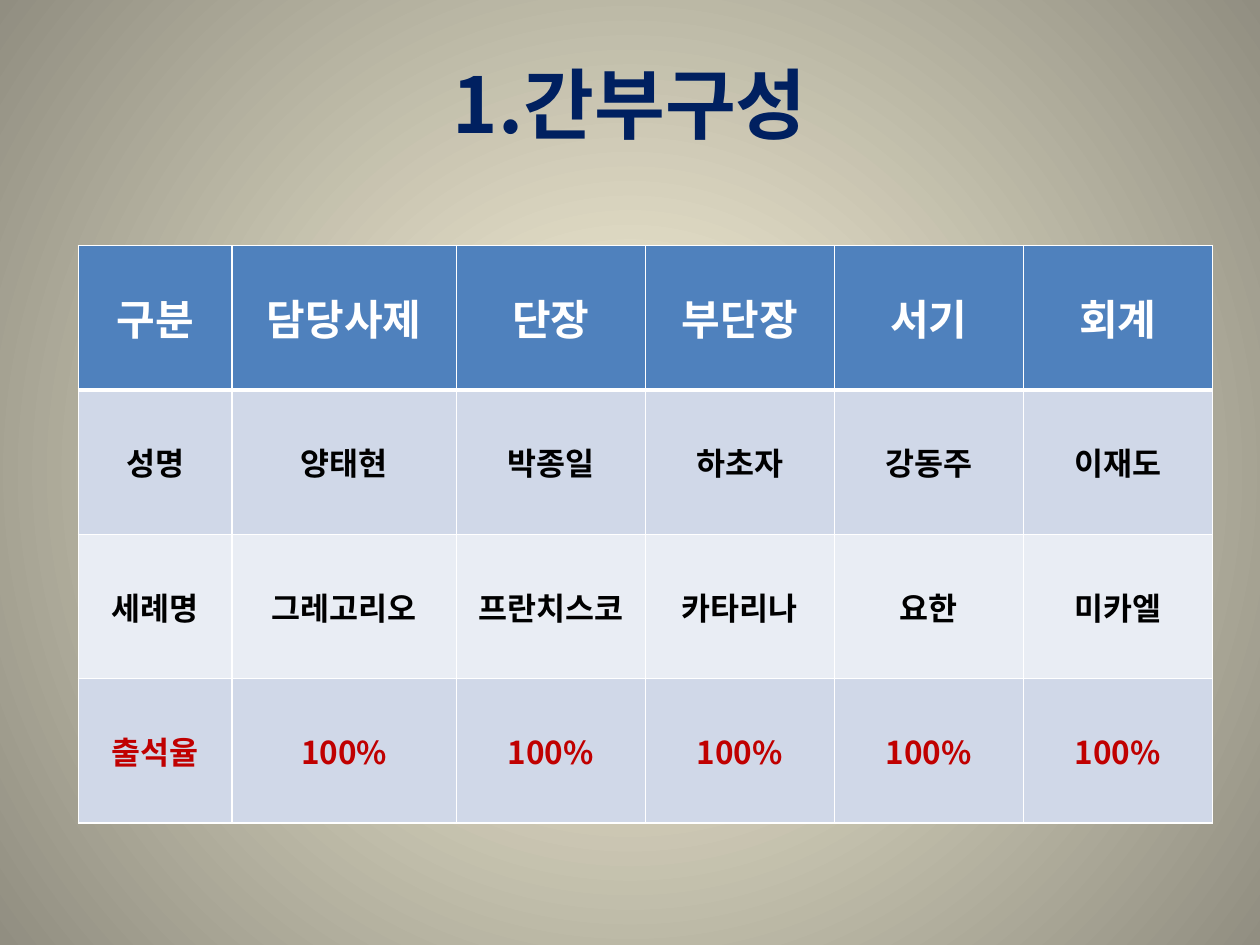
from lxml import etree
from pptx import Presentation
from pptx.dml.color import RGBColor
from pptx.enum import text
from pptx.oxml import parse_xml
from pptx.oxml.ns import nsdecls, qn
from pptx.util import Cm, Pt

TITLE = "1.간부구성"
ROWS = [
    ("구분", "담당사제", "단장", "부단장", "서기", "회계"),
    ("성명", "양태현", "박종일", "하초자", "강동주", "이재도"),
    ("세례명", "그레고리오", "프란치스코", "카타리나", "요한", "미카엘"),
    ("출석율", "100%", "100%", "100%", "100%", "100%"),
]
COLUMN_WIDTHS = (3.1, 4.52, 3.81, 3.81, 3.81, 3.81)
ROW_HEIGHT = 2.91

FONT = "Noto Sans CJK KR"
NAVY = RGBColor(0x00, 0x20, 0x60)
WHITE = RGBColor(0xFF, 0xFF, 0xFF)
BLACK = RGBColor(0x00, 0x00, 0x00)
RED = RGBColor(0xC0, 0x00, 0x00)
BLUE = RGBColor(0x4F, 0x81, 0xBD)
PALE_BLUE = RGBColor(0xD0, 0xD8, 0xE8)
PALER_BLUE = RGBColor(0xE9, 0xED, 0xF4)
CREAM = RGBColor(0xFC, 0xF7, 0xDD)
TAUPE = RGBColor(0x91, 0x8E, 0x81)

# Fill, text colour and text size of each table row
ROW_STYLES = [
    (BLUE, WHITE, 24),
    (PALE_BLUE, BLACK, 18),
    (PALER_BLUE, BLACK, 18),
    (PALE_BLUE, RED, 18),
]


def set_radial_background(slide, center, edge):
    fill = slide.background.fill
    fill.gradient()
    for stop, color, position in zip(fill.gradient_stops, (center, edge), (0, 1)):
        stop.color.rgb = color
        stop.position = position
    linear = next(slide.element.iter(qn("a:lin")))
    linear.getparent().replace(linear, parse_xml(
        f'<a:path {nsdecls("a")} path="circle">'
        '<a:fillToRect l="50000" t="50000" r="50000" b="50000"/></a:path>'))


def write_text(frame, content, size, color):
    """Write one bold, centred line, with the font set for Latin and Hangul."""
    frame.word_wrap = True
    frame.vertical_anchor = text.MSO_ANCHOR.MIDDLE
    paragraph = frame.paragraphs[0]
    paragraph.alignment = text.PP_ALIGN.CENTER
    run = paragraph.add_run()
    run.text = content
    for name, value in {"name": FONT, "size": Pt(size), "bold": True}.items():
        setattr(run.font, name, value)
    run.font.color.rgb = color
    properties = run._r.get_or_add_rPr()
    etree.SubElement(properties, qn("a:ea"), typeface=FONT)


def set_borders(cell, widths):
    """Draw white borders; widths maps each side (L, R, T, B) to points."""
    properties = cell._tc.get_or_add_tcPr()
    for index, (side, width) in enumerate(widths.items()):
        properties.insert(index, parse_xml(
            f'<a:ln{side} {nsdecls("a")} w="{Pt(width)}"><a:solidFill>'
            f'<a:srgbClr val="{WHITE}"/></a:solidFill></a:ln{side}>'))


def add_officer_table(slide):
    frame = slide.shapes.add_table(
        len(ROWS), len(COLUMN_WIDTHS), Cm(1.58), Cm(4.95),
        Cm(sum(COLUMN_WIDTHS)), Cm(ROW_HEIGHT * len(ROWS)))
    table = frame.table
    for column, width in zip(table.columns, COLUMN_WIDTHS):
        column.width = Cm(width)
    for index, (row, labels, style) in enumerate(zip(table.rows, ROWS, ROW_STYLES)):
        row.height = Cm(ROW_HEIGHT)
        fill, color, size = style
        top = 3 if index == 1 else 1
        bottom = 3 if index == 0 else 1
        for cell, label in zip(row.cells, labels):
            write_text(cell.text_frame, label, size, color)
            cell.vertical_anchor = text.MSO_ANCHOR.MIDDLE
            cell.fill.solid()
            cell.fill.fore_color.rgb = fill
            set_borders(cell, {"L": 1, "R": 1, "T": top, "B": bottom})


def main():
    presentation = Presentation()
    presentation.slide_width, presentation.slide_height = Cm(25.4), Cm(19.05)
    slide = presentation.slides.add_slide(presentation.slide_layouts[6])
    set_radial_background(slide, CREAM, TAUPE)
    title = slide.shapes.add_textbox(Cm(1.27), Cm(0.76), Cm(22.86), Cm(2.62))
    write_text(title.text_frame, TITLE, 44, NAVY)
    add_officer_table(slide)
    presentation.save("out.pptx")


if __name__ == "__main__":
    main()
